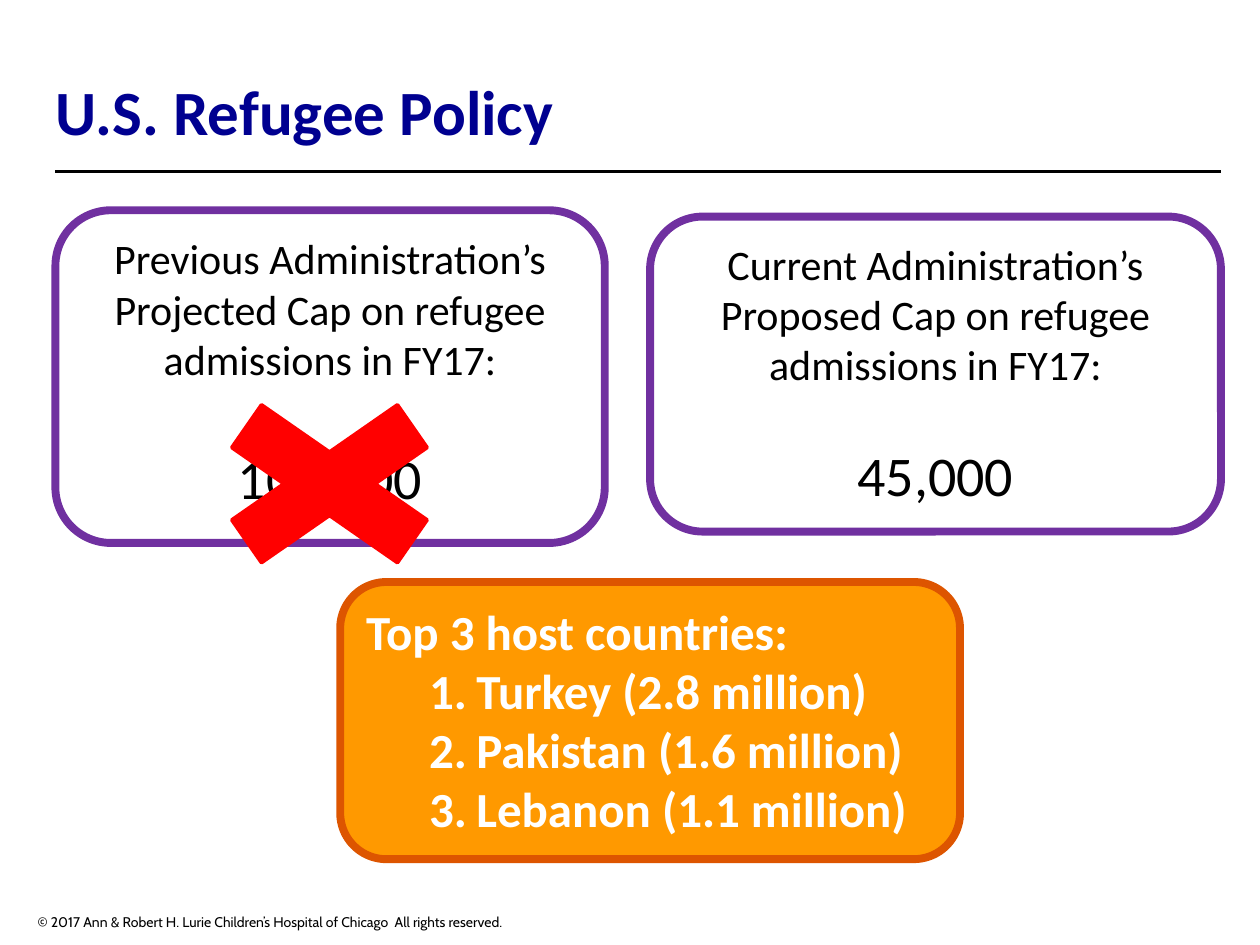
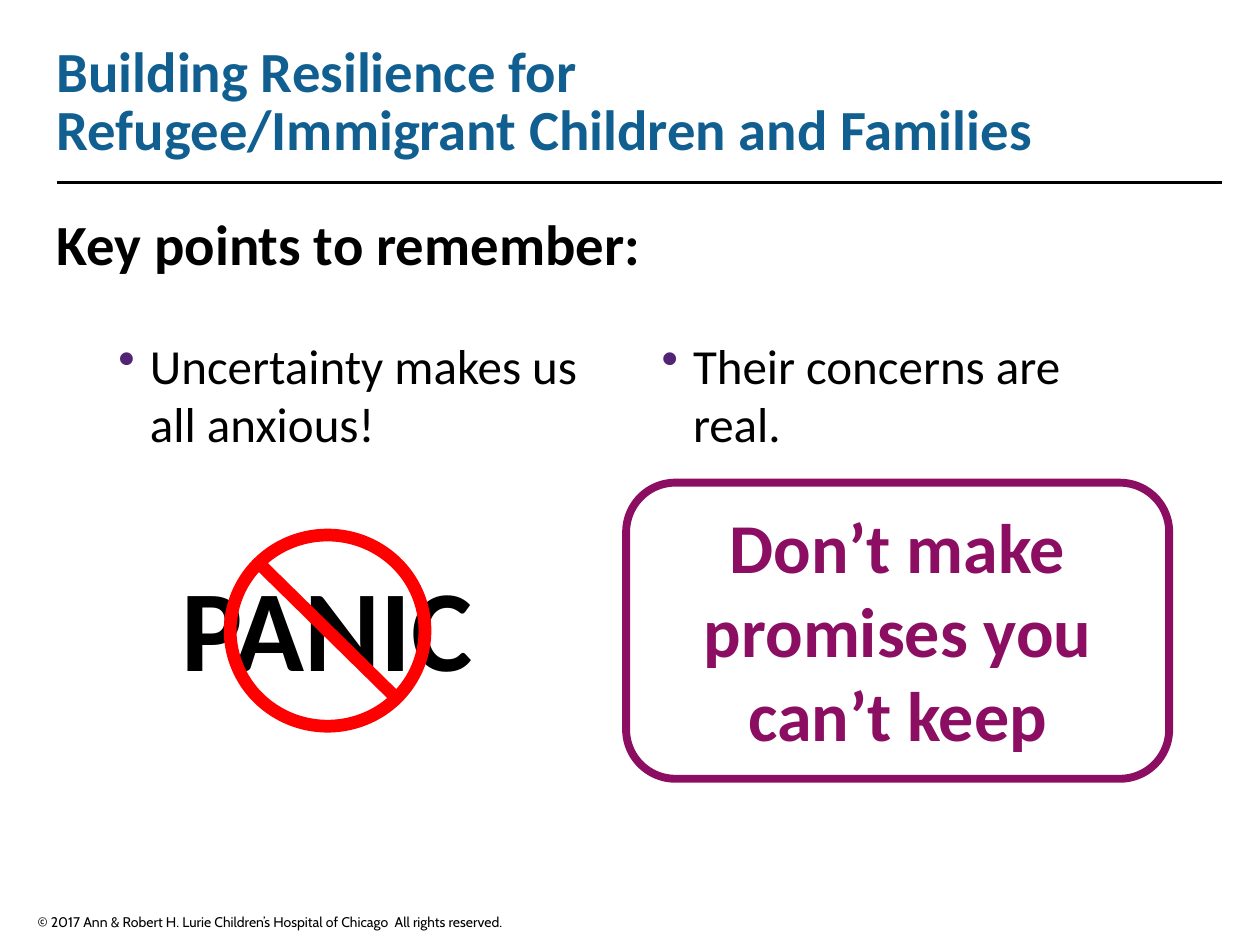
"""Build two slides on refugee policy and resilience."""
from dataclasses import dataclass, field
from typing import Any, Optional

from lxml.etree import SubElement
from pptx import Presentation
from pptx.dml.color import RGBColor
from pptx.enum.shapes import MSO_CONNECTOR as Link, MSO_SHAPE as Form
from pptx.enum.text import MSO_ANCHOR as Anchor, MSO_AUTO_SIZE as Fit, PP_ALIGN as Align
from pptx.oxml.ns import qn
from pptx.util import Pt

BLACK, WHITE, RED = "000000", "FFFFFF", "FF0000"
NAVY, BLUE, PURPLE, PLUM = "000090", "105F90", "7030A0", "8C0E62"
ORANGE, RUST, VIOLET = "FF9900", "DD5500", "522476"
RULE = 666
FOOTER = "© 2017 Ann & Robert H. Lurie Children’s Hospital of Chicago  All rights reserved."
FLUSH = dict.fromkeys(("margin_left", "margin_top", "margin_right", "margin_bottom"), 0)
GROW = {"auto_size": Fit.SHAPE_TO_FIT_TEXT}


@dataclass
class Box:
    """A place on the slide, in points."""
    left: float
    top: float
    width: float
    height: float

    def place(self) -> tuple[int, ...]:
        """Return the four lengths for a new shape."""
        return tuple(Pt(v) for v in (self.left, self.top, self.width, self.height))


@dataclass
class Mark:
    """A list mark with its indent, in points."""
    tag: str
    attrs: dict[str, str]
    left: float
    hang: float
    hue: Optional[str] = None


@dataclass
class Para:
    """A paragraph and its format."""
    text: str
    size: float
    hue: str = BLACK
    bold: bool = False
    face: str = "Calibri"
    mark: Optional[Mark] = None
    form: dict[str, Any] = field(default_factory=dict)


@dataclass
class Panel:
    """A preset shape with paint and text."""
    box: Box
    edge: str
    weight: float = 4.5
    fill: Optional[str] = None
    kind: Form = Form.ROUNDED_RECTANGLE
    paras: tuple[Para, ...] = ()
    adjust: Optional[float] = None


DOT = Mark("a:buChar", {"char": "•"}, 18, 18, VIOLET)
COUNT = Mark("a:buAutoNum", {"type": "arabicPeriod"}, 63, 27)


def paint(tint: Any, hue: str) -> None:
    """Set a colour from its hex string."""
    tint.rgb = RGBColor.from_string(hue)


def apply(target: Any, form: dict[str, Any]) -> None:
    """Set each format value on the target."""
    for name, value in form.items():
        setattr(target, name, value)


def add_mark(para: Any, mark: Mark) -> None:
    """Add a list mark to a paragraph."""
    props = para._p.get_or_add_pPr()
    props.set("marL", str(Pt(mark.left)))
    props.set("indent", str(-Pt(mark.hang)))
    if mark.hue:
        SubElement(SubElement(props, qn("a:buClr")), qn("a:srgbClr"), val=mark.hue)
    SubElement(props, qn(mark.tag), mark.attrs)


def write(frame: Any, paras: tuple[Para, ...], form: dict[str, Any]) -> None:
    """Fill a text frame with paragraphs."""
    apply(frame, {"word_wrap": True, "vertical_anchor": Anchor.TOP, **form})
    for i, item in enumerate(paras):
        para = frame.add_paragraph() if i else frame.paragraphs[0]
        para.text = item.text
        apply(para, {"alignment": Align.LEFT, **item.form})
        if item.mark:
            add_mark(para, item.mark)
        for run in para.runs:
            apply(run.font, {"name": item.face, "size": Pt(item.size), "bold": item.bold})
            paint(run.font.color, item.hue)


def add_text(slide: Any, box: Box, *paras: Para, **form: Any) -> None:
    """Draw a text box."""
    write(slide.shapes.add_textbox(*box.place()).text_frame, paras, form)


def add_panel(slide: Any, panel: Panel) -> None:
    """Draw a preset shape with its text."""
    shape = slide.shapes.add_shape(panel.kind, *panel.box.place())
    shape.shadow.inherit = False
    if panel.adjust is not None:
        shape.adjustments[0] = panel.adjust
    if panel.fill:
        shape.fill.solid()
        paint(shape.fill.fore_color, panel.fill)
    else:
        shape.fill.background()
    paint(shape.line.color, panel.edge)
    shape.line.width = Pt(panel.weight)
    if panel.paras:
        write(shape.text_frame, panel.paras, GROW)


def add_slide(deck: Any, box: Box, *paras: Para) -> Any:
    """Start a slide with its title."""
    slide = deck.slides.add_slide(deck.slide_layouts[5])
    title = slide.shapes.title
    apply(title, dict(zip(("left", "top", "width", "height"), box.place())))
    for para in paras:
        para.form["line_spacing"] = 0.85
    form = {**FLUSH, "vertical_anchor": Anchor.BOTTOM, "auto_size": Fit.NONE}
    write(title.text_frame, paras, form)
    return slide


def finish(slide: Any, left: float, top: float) -> None:
    """Draw the title rule and the footer."""
    line = slide.shapes.add_connector(
        Link.STRAIGHT, Pt(left), Pt(top), Pt(left + RULE), Pt(top))
    paint(line.line.color, BLACK)
    line.line.width = Pt(1.5)
    SubElement(line._element.spPr, qn("a:effectLst"))
    add_text(slide, Box(14.4, 518.4, 324, 14.4), Para(FOOTER, 8, face="Cabin"))


def cap_text(who: str, sum_: str, gap: float) -> tuple[Para, ...]:
    """Return the label and the figure of a cap."""
    label = f"{who} Cap on refugee admissions in FY17:"
    mid = {"alignment": Align.CENTER}
    return (Para(label, 24, form=mid),
            Para(sum_, 32, form={**mid, "space_before": Pt(gap)}))


def add_policy(deck: Any) -> None:
    """Build the refugee policy slide."""
    slide = add_slide(deck, Box(31.7, 31.7, 494.6, 53.3),
                      Para("U.S. Refugee Policy", 36, NAVY, True))
    hosts = ("Turkey (2.8 million)", "Pakistan (1.6 million)", "Lebanon (1.1 million)")
    ranks = tuple(Para(host, 28, WHITE, True, mark=COUNT) for host in hosts)
    panels = (
        Panel(Box(31.7, 120.2, 313.9, 190.1), PURPLE,
              paras=cap_text("Previous Administration’s Projected", "100,000", 34.2)),
        Panel(Box(371.5, 123.8, 326.2, 180), PURPLE,
              paras=cap_text("Current Administration’s Proposed", "45,000", 29.3)),
        Panel(Box(97.2, 213.1, 182.2, 126.7), RED, 2, RED, Form.MATH_MULTIPLY),
        Panel(Box(194.4, 332.6, 354.2, 158.4), RUST, fill=ORANGE,
              paras=(Para("Top 3 host countries:", 28, WHITE, True), *ranks)),
    )
    for panel in panels:
        add_panel(slide, panel)
    finish(slide, 31.7, 97.9)


def add_points(deck: Any) -> None:
    """Build the key points slide."""
    slide = add_slide(
        deck, Box(32.4, 124.6, 635.8, 33.8),
        Para("Building Resilience for\vRefugee/Immigrant Children and Families",
             32.4, BLUE, True),
        Para("Key points to remember:", 32.4, BLACK, True, form={"space_before": Pt(33)}))
    points = ((67.7, "Uncertainty makes us all anxious!"), (378, "Their concerns are real."))
    for left, text in points:
        add_text(slide, Box(left, 191.5, 270, 243.4), Para(text, 28, mark=DOT), **FLUSH)
    vow = Para("Don’t make promises you can’t keep", 40, PLUM, True,
               form={"alignment": Align.CENTER})
    add_panel(slide, Panel(Box(357.8, 275.8, 310.3, 169.2), PLUM, paras=(vow,)))
    add_text(slide, Box(96.5, 313.9, 182.9, 87.1), Para("PANIC", 66, bold=True),
             word_wrap=False, **GROW)
    add_panel(slide, Panel(Box(128.9, 303.1, 116.6, 114.5), RED, 2, RED,
                           Form.NO_SYMBOL, adjust=0.046))
    finish(slide, 32.4, 104.4)


def main() -> None:
    """Build and save the deck."""
    deck = Presentation()
    apply(deck, {"slide_width": Pt(720), "slide_height": Pt(540)})
    add_policy(deck)
    add_points(deck)
    deck.save("out.pptx")


if __name__ == "__main__":
    main()
